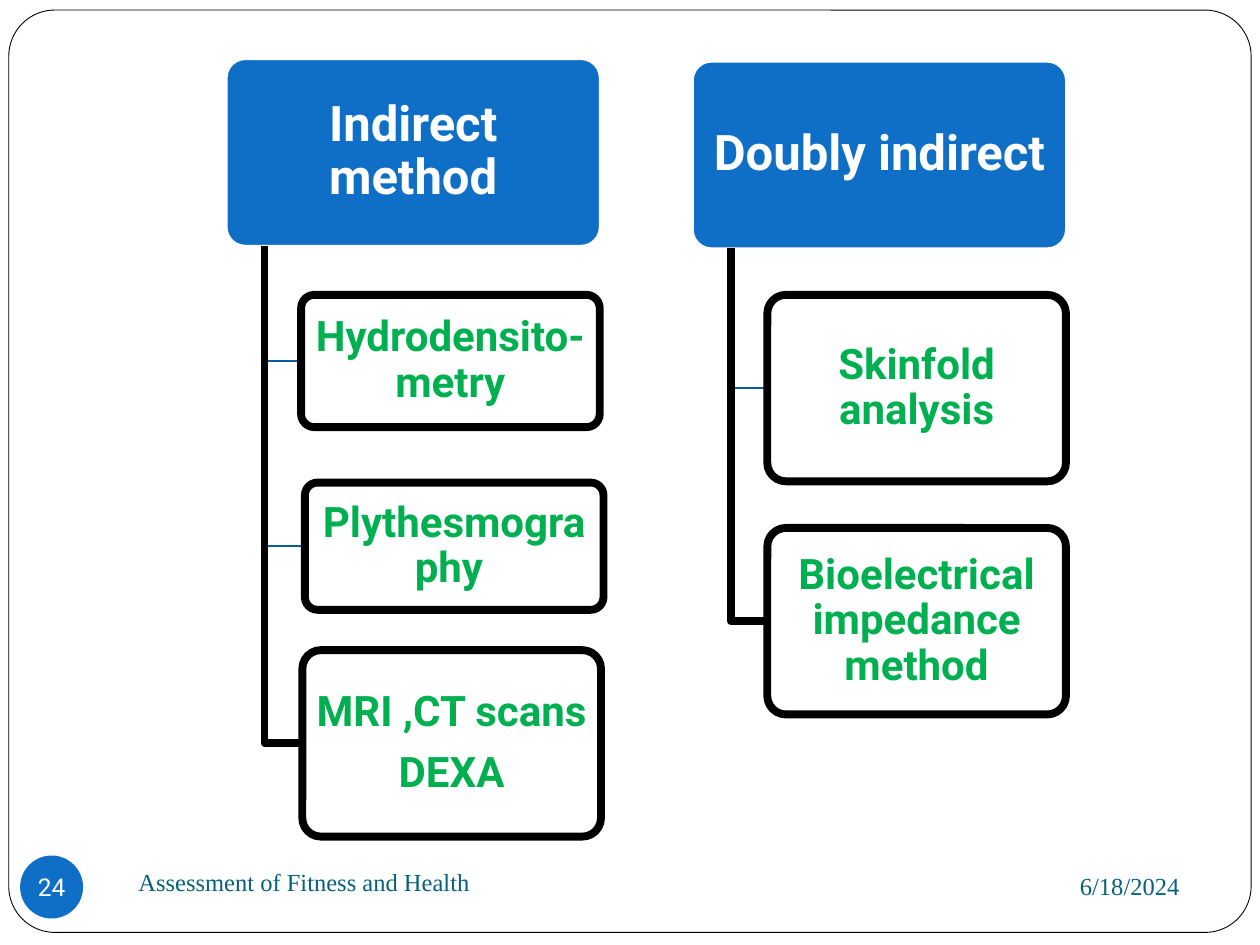
"""Build a slide with two trees of body composition methods."""
from pptx import Presentation
from pptx.dml.color import RGBColor
from pptx.enum.shapes import MSO_SHAPE
from pptx.enum.text import MSO_ANCHOR, PP_ALIGN
from pptx.util import Inches, Pt

COLORS = {
    "white": "FFFFFF",
    "black": "000000",
    "blue": "0F6FC6",
    "branch": "0C599F",
    "green": "00B050",
    "teal": "04617B",
}
HEADING_SIZE = (2.96, 1.48)
METHOD_WIDTH = 2.37
TRUNK_OFFSET = 0.3
TREES = [
    {
        "heading": "Indirect method",
        "at": (1.8, 0.47),
        "methods": [
            ("Hydrodensito-metry", 2.39, 2.34, 1.05),
            ("Plythesmography ", 2.42, 3.83, 1.01),
            ("MRI ,CT scans\nDEXA", 2.4, 5.16, 1.48),
        ],
    },
    {
        "heading": "Doubly indirect",
        "at": (5.5, 0.49),
        "methods": [
            ("Skinfold analysis", 6.09, 2.34, 1.48),
            ("Bioelectrical impedance method", 6.09, 4.19, 1.48),
        ],
    },
]
FOOTERS = [
    ("6/18/2024", (6.75, 6.77, 2.71, 0.52), PP_ALIGN.RIGHT),
    ("Assessment of Fitness and Health", (1, 6.75, 4.33, 0.5), PP_ALIGN.LEFT),
]


def color(name):
    return RGBColor.from_string(COLORS[name])


def set_line(shape, name, width):
    shape.line.color.rgb = color(name)
    shape.line.width = Pt(width)


def add_box(page, kind, bounds, fill, line=None, rounding=None):
    box = page.shapes.add_shape(kind, *map(Inches, bounds))
    box.shadow.inherit = False
    box.fill.solid()
    box.fill.fore_color.rgb = color(fill)
    if line:
        set_line(box, *line)
    else:
        box.line.fill.background()
    if rounding:
        box.adjustments[0] = rounding
    return box


def set_text(box, text, size, name, font="Roboto", align=PP_ALIGN.CENTER, bold=False):
    frame = box.text_frame
    frame.text = text
    frame.word_wrap = True
    frame.vertical_anchor = MSO_ANCHOR.MIDDLE
    for paragraph in frame.paragraphs:
        paragraph.alignment = align
        for span in paragraph.runs:
            span.font.name = font
            span.font.size = Pt(size)
            span.font.bold = bold
            span.font.color.rgb = color(name)


def set_margins(box, side, top):
    frame = box.text_frame
    frame.margin_left = frame.margin_right = Inches(side)
    frame.margin_top = frame.margin_bottom = Inches(top)


def add_node(page, text, bounds, fill, line, size, name, margins):
    box = add_box(page, MSO_SHAPE.ROUNDED_RECTANGLE, bounds, fill, line, 0.1)
    set_text(box, text, size, name, bold=True)
    set_margins(box, *margins)
    for paragraph in box.text_frame.paragraphs:
        paragraph.line_spacing = 0.9
        paragraph.space_after = Pt(9)


def add_branch(page, start, end, line):
    points = [(start[0], end[1]), end]
    builder = page.shapes.build_freeform(*map(Inches, start))
    builder.add_line_segments([tuple(map(Inches, point)) for point in points], close=False)
    branch = builder.convert_to_shape()
    branch.shadow.inherit = False
    branch.fill.background()
    set_line(branch, *line)


def add_tree(page, tree):
    left, top = tree["at"]
    add_node(page, tree["heading"], (left, top, *HEADING_SIZE), "blue", ("white", 1),
             28, "white", (0.06, 0.04))
    start = (left + TRUNK_OFFSET, top + HEADING_SIZE[1])
    last = len(tree["methods"]) - 1
    for index, (text, x, y, height) in enumerate(tree["methods"]):
        line = ("black", 4.5) if index == last else ("branch", 1)
        add_branch(page, start, (x, y + height / 2), line)
        add_node(page, text, (x, y, METHOD_WIDTH, height), "white", ("black", 4.5),
                 24, "green", (0.05, 0.03))


def main():
    deck = Presentation()
    deck.slide_width, deck.slide_height = Inches(10), Inches(7.5)
    page = deck.slides.add_slide(deck.slide_layouts[6])
    add_box(page, MSO_SHAPE.ROUNDED_RECTANGLE, (0.07, 0.08, 9.86, 7.32),
            "white", ("black", 0.5), 0.05)
    for tree in TREES:
        add_tree(page, tree)
    badge = add_box(page, MSO_SHAPE.OVAL, (0.16, 6.79, 0.5, 0.5), "blue")
    set_text(badge, "24", 14, "white")
    set_margins(badge, 0, 0)
    badge.text_frame.word_wrap = False
    for text, bounds, align in FOOTERS:
        box = page.shapes.add_textbox(*map(Inches, bounds))
        set_text(box, text, 14, "teal", "Times New Roman", align)
    deck.save("out.pptx")


if __name__ == "__main__":
    main()
